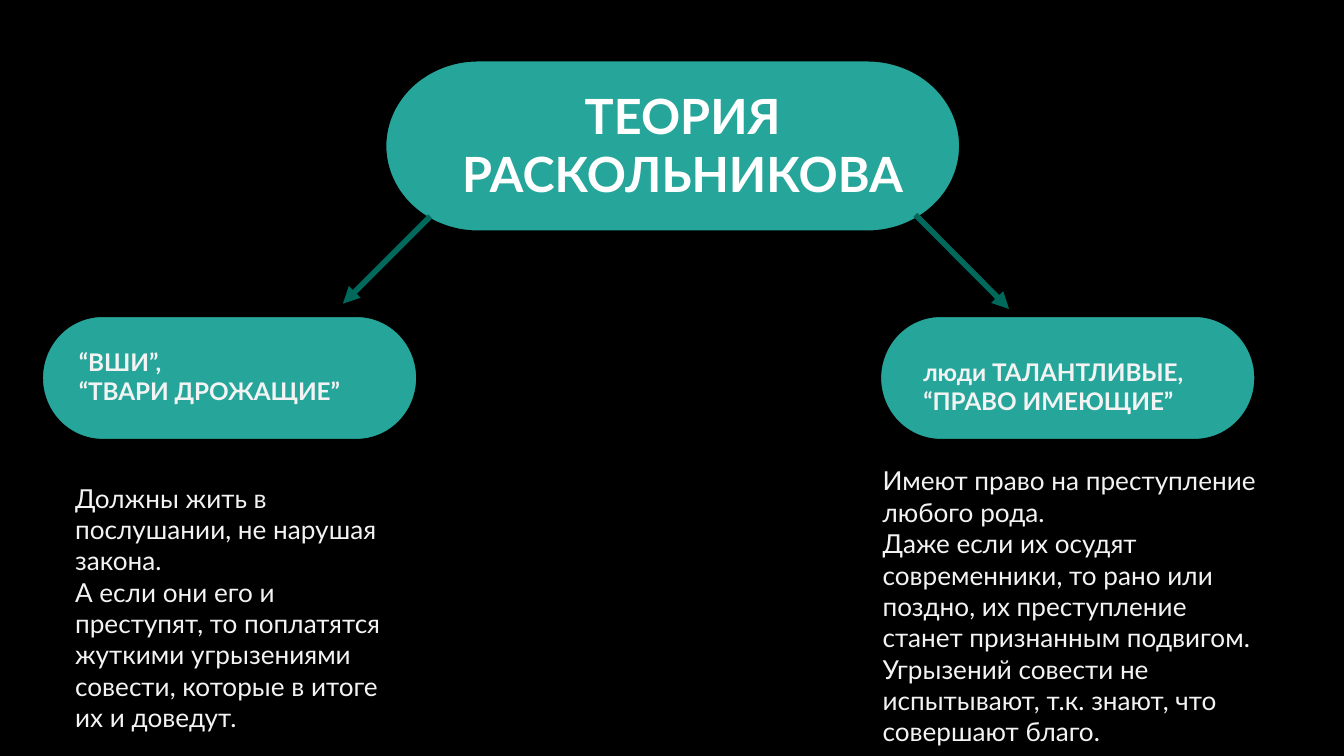
from lxml.etree import SubElement
from pptx import Presentation
from pptx.dml.color import RGBColor
from pptx.enum.shapes import MSO_CONNECTOR as Connector, MSO_SHAPE as Shape
from pptx.enum.text import MSO_ANCHOR as Anchor, PP_ALIGN as Align
from pptx.oxml.ns import qn
from pptx.util import Cm, Pt


def color(value):
    return RGBColor.from_string(value)


def add_text(box, lines, size, tint, bold=False, align=Align.LEFT, anchor=Anchor.TOP):
    frame = slide.shapes.add_textbox(*map(Cm, box)).text_frame
    frame.word_wrap = True
    frame.vertical_anchor = anchor
    frame.margin_left = frame.margin_right = Cm(0.25)
    frame.margin_top = frame.margin_bottom = Cm(0.25)
    paragraph = frame.paragraphs[0]
    paragraph.alignment = align
    for index, line in enumerate(lines):
        if index:
            paragraph.add_line_break()
        run = paragraph.add_run()
        run.text = line
        run.font.name = "Lato"
        run.font.size = Pt(size)
        run.font.bold = bold
        run.font.color.rgb = color(tint)


prs = Presentation()
prs.slide_width, prs.slide_height = Cm(25.4), Cm(14.29)
slide = prs.slides.add_slide(prs.slide_layouts[6])
slide.background.fill.solid()
slide.background.fill.fore_color.rgb = color("000000")

theory = (7.29, 1.15, 10.85, 3.22)
trembling = (0.8, 5.98, 7.08, 2.33)
entitled = (16.64, 5.98, 7.08, 2.33)
for box in (theory, trembling, entitled):
    pill = slide.shapes.add_shape(Shape.FLOWCHART_TERMINATOR, *map(Cm, box))
    pill.shadow.inherit = False
    pill.fill.solid()
    pill.fill.fore_color.rgb = color("26A69A")
    pill.line.color.rgb = color("000000")
    pill.line.width = Pt(0.75)

for ends in ((8.13, 4.09, 6.48, 5.74), (17.3, 4.06, 19.07, 5.84)):
    arrow = slide.shapes.add_connector(Connector.STRAIGHT, *map(Cm, ends))
    arrow.line.color.rgb = color("00695C")
    arrow.line.width = Pt(3)
    SubElement(arrow.line._get_or_add_ln(), qn("a:tailEnd"), type="triangle")
    SubElement(arrow._element.spPr, qn("a:effectLst"))

add_text((8.13, 1.37, 9.55, 2.74), ["ТЕОРИЯ РАСКОЛЬНИКОВА"], 26, "FFFFFF", True, Align.CENTER)
add_text((1.24, 6.32, 6.17, 1.63), ["“ВШИ”,", "“ТВАРИ ДРОЖАЩИЕ”"], 13, "F3F3F3", True)
add_text((17.2, 6.5, 5.97, 1.63), ["люди ТАЛАНТЛИВЫЕ, “ПРАВО ИМЕЮЩИЕ”"], 13, "F3F3F3", True)
add_text((1.17, 8.86, 6.71, 5.31), [
    "Должны жить в послушании, не нарушая закона.",
    "А если они его и преступят, то поплатятся жуткими угрызениями совести, "
    "которые в итоге их и доведут.",
], 14, "F3F3F3")
add_text((16.43, 8.51, 7.62, 5.89), [
    "Имеют право на преступление любого рода. ",
    "Даже если их осудят современники, то рано или поздно, "
    "их преступление станет признанным подвигом.",
    "Угрызений совести не испытывают, т.к. знают, что совершают благо.",
], 14, "F3F3F3", anchor=Anchor.MIDDLE)

prs.save("out.pptx")
